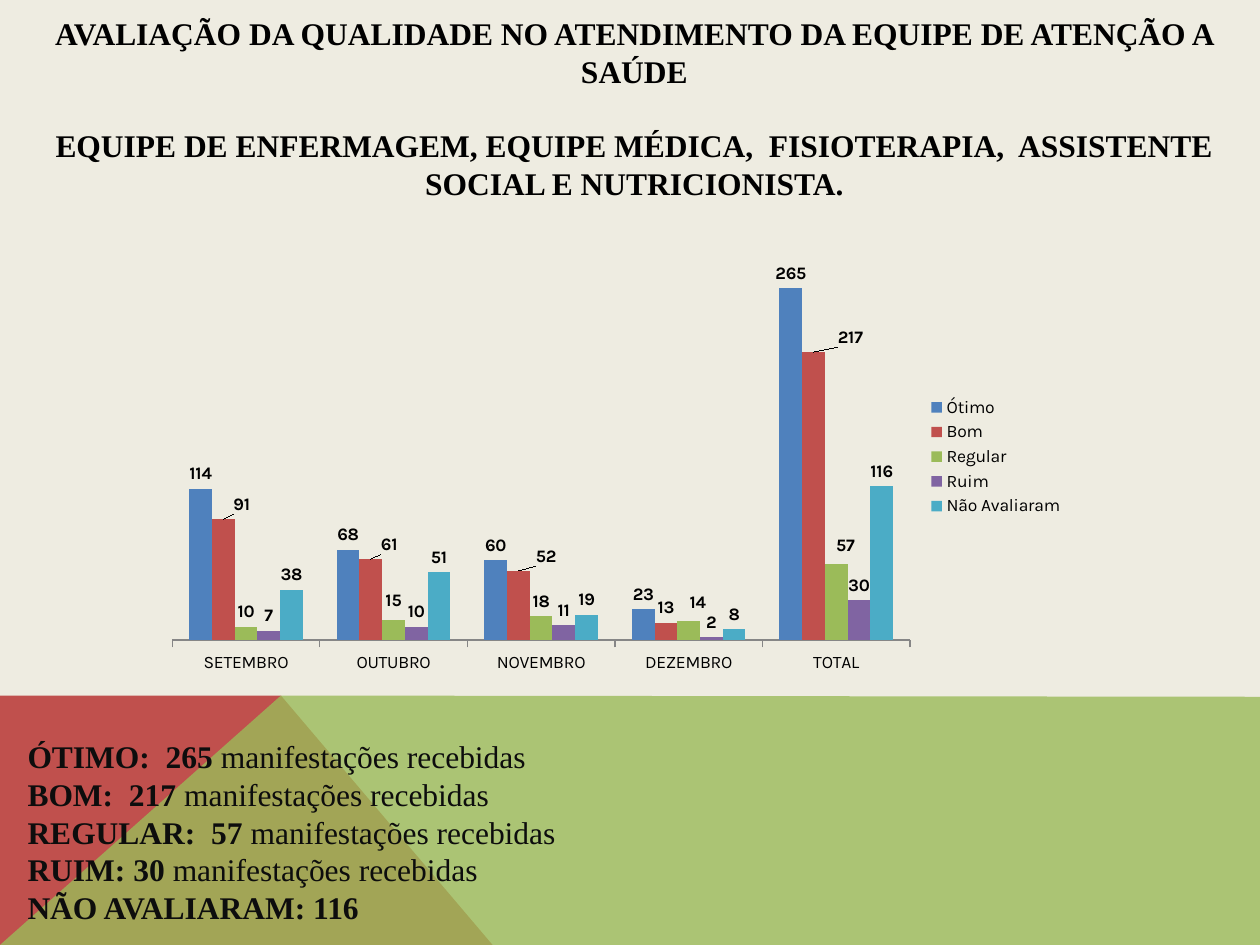
from lxml.etree import SubElement
from pptx import Presentation
from pptx.chart.data import CategoryChartData
from pptx.dml.color import RGBColor
from pptx.enum.chart import XL_CHART_TYPE, XL_LABEL_POSITION, XL_LEGEND_POSITION, XL_TICK_MARK
from pptx.enum.text import MSO_ANCHOR, MSO_AUTO_SIZE, PP_ALIGN
from pptx.oxml import parse_xml
from pptx.oxml.ns import nsdecls, qn
from pptx.util import Inches, Pt

SERIF = "Times New Roman"
HEADS = [
    "AVALIAÇÃO DA QUALIDADE NO ATENDIMENTO DA EQUIPE DE ATENÇÃO A SAÚDE",
    "EQUIPE DE ENFERMAGEM, EQUIPE MÉDICA,  FISIOTERAPIA,  ASSISTENTE SOCIAL E NUTRICIONISTA.",
]
NOTES = [
    ("ÓTIMO:  265 ", "manifestações recebidas"),
    ("BOM:  217 ", "manifestações recebidas"),
    ("REGULAR:  57 ", "manifestações recebidas"),
    ("RUIM: 30 ", "manifestações recebidas"),
    ("NÃO AVALIARAM: 116", ""),
]
MONTHS = ["SETEMBRO", "OUTUBRO", "NOVEMBRO", "DEZEMBRO", "TOTAL"]
SERIES = [
    ("Ótimo", "4F81BD", [114, 68, 60, 23, 265], {}),
    ("Bom", "C0504D", [91, 61, 52, 13, 217],
     {0: (0.02, 0), 1: (0.02, 0), 2: (0.03, 0), 4: (0.04, 0)}),
    ("Regular", "9BBB59", [10, 15, 18, 14, 57],
     {1: (0, -0.01), 3: (0.01, -0.01), 4: (0.01, -0.01)}),
    ("Ruim", "8064A2", [7, 10, 11, 2, 30], {}),
    ("Não Avaliaram", "4BACC6", [38, 51, 19, 8, 116], {}),
]
BANDS = [
    ("C0504D", 100, [(0, 7.5), (0, 5.52), (2.23, 5.52), (3.91, 7.5)]),
    ("9BBB59", 80, [(0, 7.5), (2.23, 5.52), (10, 5.53), (10, 7.5)]),
]


def rgb(code):
    return RGBColor.from_string(code)


def box(*sides):
    return [Inches(side) for side in sides]


def style(font, name, size, code, bold=False):
    font.name, font.size, font.bold = name, Pt(size), bold
    font.color.rgb = rgb(code)


def layout(**parts):
    tags = "".join(f'<c:{key} val="{val}"/>' for key, val in parts.items())
    return parse_xml(
        f'<c:layout {nsdecls("c")}><c:manualLayout>{tags}</c:manualLayout></c:layout>')


def add_band(slide, code, alpha, points):
    pen = slide.shapes.build_freeform(*box(*points[0]))
    pen.add_line_segments([box(*point) for point in points[1:]], close=True)
    band = pen.convert_to_shape()
    band.shadow.inherit = False
    band.fill.solid()
    band.fill.fore_color.rgb = rgb(code)
    band.line.fill.background()
    if alpha < 100:
        tint = band.fill._xPr.find(".//" + qn("a:srgbClr"))
        SubElement(tint, qn("a:alpha"), val=str(alpha * 1000))


def add_title(slide):
    title = slide.shapes.title
    title.left, title.top, title.width, title.height = box(0.31, 0.31, 9.45, 1.09)
    frame = title.text_frame
    frame.auto_size = MSO_AUTO_SIZE.NONE
    frame.vertical_anchor = MSO_ANCHOR.MIDDLE
    frame.text = "\n".join(HEADS)
    for para in frame.paragraphs:
        para.alignment = PP_ALIGN.CENTER
        style(para.runs[0].font, SERIF, 18, "000000", True)
    frame.paragraphs[1].space_before = Pt(21)


def add_notes(slide):
    frame = slide.shapes.add_textbox(*box(0.12, 5.8, 4.45, 2.22)).text_frame
    frame.word_wrap = True
    for row, (head, tail) in enumerate(NOTES):
        para = frame.add_paragraph() if row else frame.paragraphs[0]
        for text, bold in ((head, True), (tail, False)):
            if text:
                run = para.add_run()
                run.text = text
                style(run.font, SERIF, 18, "0D0D0D", bold)


def add_labels(plot_series, shifts):
    labels = plot_series.data_labels
    labels.show_value = True
    labels.position = XL_LABEL_POSITION.OUTSIDE_END
    style(labels.font, "Karla", 10, "000000", True)
    for spot, (x, y) in shifts.items():
        label = plot_series.points[spot].data_label
        label.position = XL_LABEL_POSITION.OUTSIDE_END
        style(label.font, "Karla", 10, "000000", True)
        node = labels._element.find(f'{qn("c:dLbl")}[{spot_rank(shifts, spot)}]')
        node.insert(1, layout(x=x, y=y))


def spot_rank(shifts, spot):
    return sorted(shifts).index(spot) + 1


def add_graph(slide):
    data = CategoryChartData()
    data.categories = MONTHS
    for name, _, values, _ in SERIES:
        data.add_series(name, values)
    chart = slide.shapes.add_chart(
        XL_CHART_TYPE.COLUMN_CLUSTERED, *box(1.22, 1.85, 7.32, 3.55), data).chart
    style(chart.font, "Karla", 10, "000000")
    chart.has_title = False
    chart.has_legend = True
    chart.legend.position = XL_LEGEND_POSITION.RIGHT
    chart.legend.include_in_layout = False

    scale = chart.value_axis
    scale.visible = False
    scale.has_major_gridlines = False
    scale.minimum_scale, scale.maximum_scale = 0, 300
    axis = chart.category_axis
    axis.major_tick_mark = XL_TICK_MARK.OUTSIDE
    axis.format.line.color.rgb = rgb("868686")

    plot = chart.plots[0]
    plot.gap_width, plot.overlap = 150, 0
    plot.vary_by_categories = False
    for item, (_, code, _, shifts) in zip(plot.series, SERIES):
        item.format.fill.solid()
        item.format.fill.fore_color.rgb = rgb(code)
        add_labels(item, shifts)

    area = chart._chartSpace.find(".//" + qn("c:plotArea"))
    for old in area.findall(qn("c:layout")):
        area.remove(old)
    area.insert(0, layout(layoutTarget="inner", xMode="edge", yMode="edge",
                          x=0.02, y=0.02, w=0.8, h=0.89))


def main():
    deck = Presentation()
    deck.slide_width, deck.slide_height = box(10, 7.5)
    slide = deck.slides.add_slide(deck.slide_layouts[5])
    slide.background.fill.solid()
    slide.background.fill.fore_color.rgb = rgb("EEECE1")
    for band in BANDS:
        add_band(slide, *band)
    add_title(slide)
    add_notes(slide)
    add_graph(slide)
    deck.save("out.pptx")


if __name__ == "__main__":
    main()
